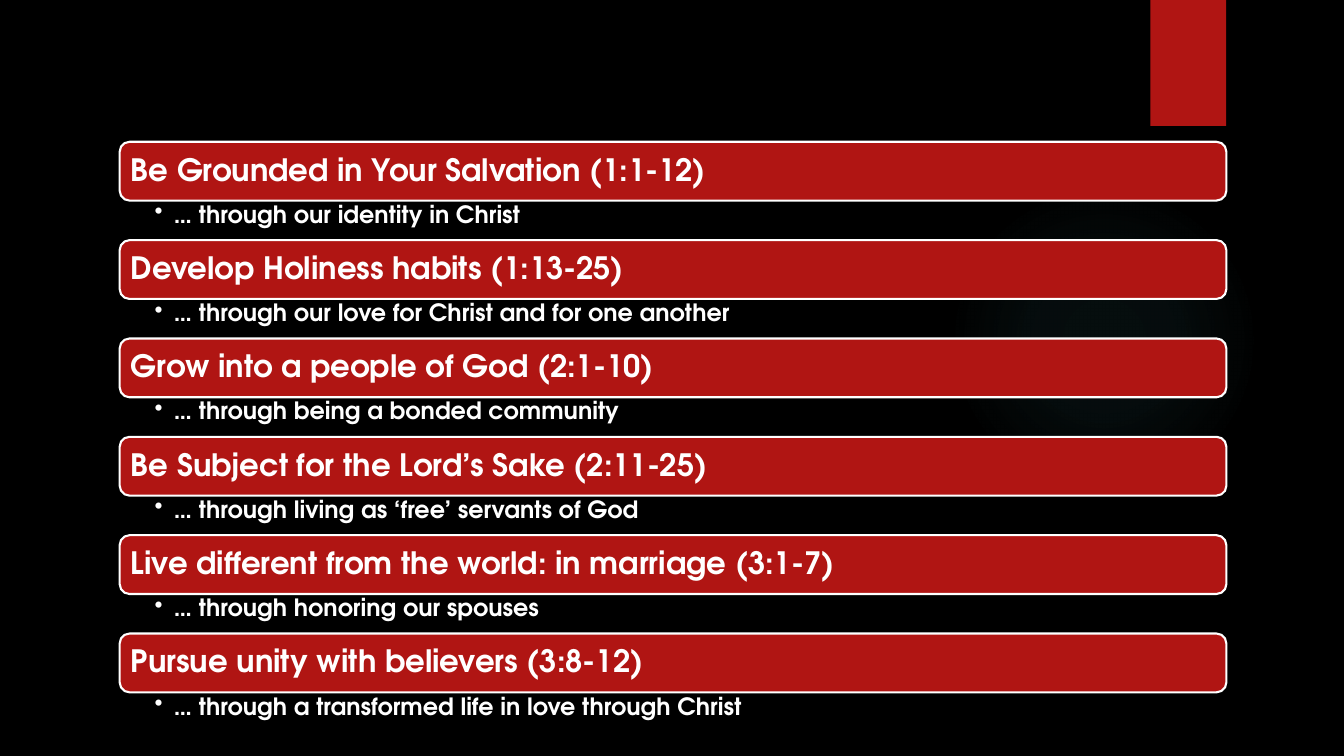
"""Build a slide of six themes, each a red bar with a bulleted line below."""
from pptx import Presentation
from pptx.dml.color import RGBColor
from pptx.enum.shapes import MSO_SHAPE
from pptx.enum.text import MSO_ANCHOR, PP_ALIGN
from pptx.oxml import parse_xml
from pptx.oxml.ns import nsdecls
from pptx.util import Pt

OVAL, RECT, ROUND = MSO_SHAPE.OVAL, MSO_SHAPE.RECTANGLE, MSO_SHAPE.ROUNDED_RECTANGLE
MIDDLE, TOP, LEFT = MSO_ANCHOR.MIDDLE, MSO_ANCHOR.TOP, PP_ALIGN.LEFT
BLACK = RGBColor(0x00, 0x00, 0x00)
WHITE = RGBColor(0xFF, 0xFF, 0xFF)
RED = RGBColor(0xB0, 0x15, 0x13)
TEAL = RGBColor(0x50, 0xB9, 0xC1)
FONT = "TeX Gyre Adventor"

EDGE, START, STEP = 85.5, 101.3, 70.25
WIDTH, BAR, NOTE = 790.5, 42, 28.6
STOPS = [(0, 7), (36, 6), (69, 0)]
THEMES = [
    ("Be Grounded in Your Salvation (1:1-12)", "… through our identity in Christ"),
    ("Develop Holiness habits (1:13-25)",
     "… through our love for Christ and for one another"),
    ("Grow into a people of God (2:1-10)", "… through being a bonded community"),
    ("Be Subject for the Lord’s Sake (2:11-25)",
     "… through living as ‘free’ servants of God"),
    ("Live different from the world: in marriage (3:1-7)",
     "… through honoring our spouses"),
    ("Pursue unity with believers (3:8-12)",
     "… through a transformed life in love through Christ"),
]


def add_shape(slide, kind, box, fill=None):
    """Add a flat shape without a line, filled if a colour is given."""
    shape = slide.shapes.add_shape(kind, *map(Pt, box))
    shape.shadow.inherit = False
    shape.line.fill.background()
    if fill is not None:
        shape.fill.solid()
        shape.fill.fore_color.rgb = fill
    return shape


def add_glow(slide, box):
    """Add a circle that fades out from its centre."""
    stops = "".join(
        f'<a:gs pos="{place * 1000}"><a:srgbClr val="{TEAL}">'
        f'<a:alpha val="{alpha * 1000}"/></a:srgbClr></a:gs>'
        for place, alpha in STOPS)
    fill = parse_xml(
        f'<a:gradFill {nsdecls("a")}><a:gsLst>{stops}</a:gsLst>'
        '<a:path path="circle"><a:fillToRect l="50000" t="50000" r="50000" b="50000"/>'
        '</a:path></a:gradFill>')
    add_shape(slide, OVAL, box).element.spPr.insert(2, fill)


def set_text(shape, text, size, anchor, insets):
    """Write one bold white line and return its paragraph."""
    frame = shape.text_frame
    frame.word_wrap = True
    frame.vertical_anchor = anchor
    (frame.margin_left, frame.margin_top,
     frame.margin_right, frame.margin_bottom) = map(Pt, insets)
    para = frame.paragraphs[0]
    para.alignment = LEFT
    para.line_spacing = 0.9
    run = para.add_run()
    run.text = text
    run.font.name = FONT
    run.font.size = Pt(size)
    run.font.bold = True
    run.font.color.rgb = WHITE
    return para


def add_bar(slide, top, text):
    """Add a rounded red bar holding a heading."""
    bar = add_shape(slide, ROUND, (EDGE, top, WIDTH, BAR), RED)
    bar.line.color.rgb = WHITE
    bar.line.width = Pt(1.5)
    set_text(bar, text, 22, MIDDLE, (6, 6, 6, 6))


def add_note(slide, top, text):
    """Add a bulleted line."""
    box = slide.shapes.add_textbox(*map(Pt, (EDGE, top, WIDTH, NOTE)))
    para = set_text(box, text, 17, TOP, (25, 2, 12, 2))
    para.level = 1
    props = para._p.get_or_add_pPr()
    props.set("marL", str(Pt(13.5)))
    props.set("indent", str(Pt(-13.5)))
    props.append(parse_xml(f'<a:buChar {nsdecls("a")} char="•"/>'))


def main():
    """Build and save the slide."""
    deck = Presentation()
    deck.slide_width, deck.slide_height = Pt(960), Pt(540)
    slide = deck.slides.add_slide(deck.slide_layouts[6])
    slide.background.fill.solid()
    slide.background.fill.fore_color.rgb = BLACK
    add_glow(slide, (677.5, 131.8, 221.8, 221.8))
    add_shape(slide, RECT, (821.8, 0, 54, 90), RED)
    for row, (head, note) in enumerate(THEMES):
        top = START + row * STEP
        add_bar(slide, top, head)
        add_note(slide, top + BAR - 0.5, note)
    deck.save("out.pptx")


if __name__ == "__main__":
    main()
